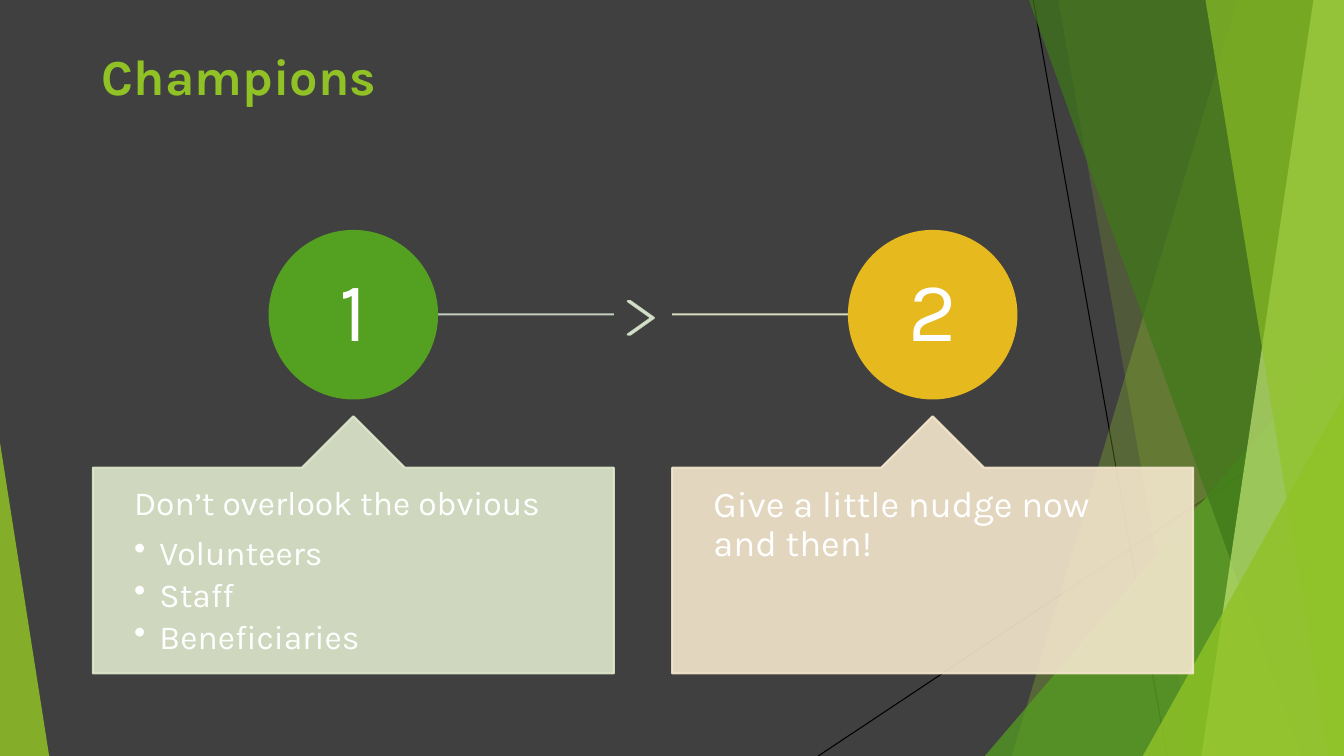
from dataclasses import dataclass

from lxml.etree import SubElement
from pptx import Presentation
from pptx.dml.color import RGBColor
from pptx.enum.shapes import MSO_CONNECTOR, MSO_SHAPE
from pptx.enum.text import MSO_ANCHOR, MSO_AUTO_SIZE, PP_ALIGN
from pptx.oxml.ns import qn
from pptx.shapes.autoshape import Shape
from pptx.shapes.connector import Connector
from pptx.slide import Slide
from pptx.text.text import TextFrame
from pptx.util import Cm, Pt

FONT = "Karla"
WIDTH, HEIGHT = 33.87, 19.05
CHARCOAL = RGBColor(0x40, 0x40, 0x40)
BLACK = RGBColor(0x00, 0x00, 0x00)
WHITE = RGBColor(0xFF, 0xFF, 0xFF)
LIME = RGBColor(0x90, 0xC2, 0x26)
PALE_LIME = RGBColor(0xC0, 0xE4, 0x74)
FOREST = RGBColor(0x3F, 0x78, 0x19)
GREEN = RGBColor(0x54, 0xA0, 0x21)
GOLD = RGBColor(0xE6, 0xB9, 0x1E)
SAGE = RGBColor(0xDF, 0xE9, 0xCC)
SAND = RGBColor(0xF5, 0xE7, 0xCD)
FIRST_LINE = RGBColor(0xD1, 0xDF, 0xCD)
SECOND_LINE = RGBColor(0xEA, 0xEE, 0xCC)
CHEVRON = RGBColor(0xD7, 0xE4, 0xCC)

CARD_WIDTH, CARD_TOP, CARD_HEIGHT = 13.13, 10.49, 6.48
POINTER = 1.3
CIRCLE_TOP, CIRCLE_SIZE, NUMBER_SIZE = 5.82, 4.22, 3.0
LINE_Y = 7.92
LINE_HEIGHT = 1.17


@dataclass
class Band:
    """Panel reaching the right edge, with a slanted left side."""
    top_left: float
    bottom_left: float
    colour: RGBColor
    opacity: int


@dataclass
class Wedge:
    """Right triangle standing on the bottom edge."""
    left: float
    top: float
    width: float
    apex: float
    colour: RGBColor
    opacity: int


@dataclass
class Line:
    start: tuple[float, float]
    end: tuple[float, float]
    colour: RGBColor
    weight: float
    opacity: int = 100


@dataclass
class Step:
    number: str
    left: float
    circle: RGBColor
    card: RGBColor
    size: int
    heading: str
    bullets: tuple[str, ...]
    line: Line


EDGE_LINES = [
    Line((26.04, 0), (29.41, HEIGHT), BLACK, 0.75),
    Line((WIDTH, 10.24), (20.62, HEIGHT), BLACK, 0.75),
]
FACETS = [
    Band(31.19, 25.5, LIME, 30),
    Band(26.67, 30.05, LIME, 20),
    Wedge(24.82, 8.46, WIDTH - 24.82, 1, GREEN, 72),
    Band(25.93, 32.79, FOREST, 70),
    Band(33.1, 30.28, PALE_LIME, 70),
    Band(30.38, 33.48, LIME, 65),
    Wedge(28.8, 9.98, WIDTH - 28.8, 1, LIME, 80),
    Wedge(0, 11.15, 1.24, 0, LIME, 85),
]
STEPS = [
    Step("1", 2.34, GREEN, SAGE, 24, "Don’t overlook the obvious",
         ("Volunteers", "Staff", "Beneficiaries"),
         Line((9.63, LINE_Y), (15.47, LINE_Y), FIRST_LINE, 1.5, 90)),
    Step("2", 16.94, GOLD, SAND, 26, "Give a little nudge now and then!", (),
         Line((16.94, LINE_Y), (23.52, LINE_Y), SECOND_LINE, 1.5, 90)),
]


def set_opacity(shape: Shape | Connector, percent: int) -> None:
    if percent < 100:
        for colour in shape._element.xpath("./p:spPr//a:srgbClr"):
            SubElement(colour, qn("a:alpha")).set("val", str(percent * 1000))


def paint(shape: Shape, colour: RGBColor, opacity: int = 100, outlined: bool = True) -> None:
    shape.shadow.inherit = False
    shape.fill.solid()
    shape.fill.fore_color.rgb = colour
    if outlined:
        shape.line.color.rgb = colour
        shape.line.width = Pt(1.5)
    else:
        shape.line.fill.background()
    set_opacity(shape, opacity)


def draw_line(page: Slide, line: Line) -> None:
    connector = page.shapes.add_connector(
        MSO_CONNECTOR.STRAIGHT, *map(Cm, line.start + line.end))
    connector.line.color.rgb = line.colour
    connector.line.width = Pt(line.weight)
    SubElement(connector._element.spPr, qn("a:effectLst"))
    set_opacity(connector, line.opacity)


def draw_facet(page: Slide, facet: Band | Wedge) -> None:
    if isinstance(facet, Band):
        builder = page.shapes.build_freeform(Cm(facet.top_left), 0)
        corners = [(WIDTH, 0), (WIDTH, HEIGHT), (facet.bottom_left, HEIGHT)]
        builder.add_line_segments([(Cm(x), Cm(y)) for x, y in corners])
        shape = builder.convert_to_shape()
    else:
        shape = page.shapes.add_shape(
            MSO_SHAPE.ISOSCELES_TRIANGLE, Cm(facet.left), Cm(facet.top),
            Cm(facet.width), Cm(HEIGHT - facet.top))
        shape.adjustments[0] = facet.apex
    paint(shape, facet.colour, facet.opacity, outlined=False)


def add_text_frame(page: Slide, left: float, top: float, width: float, height: float,
                   side: float, edge: float) -> TextFrame:
    box = page.shapes.add_textbox(Cm(left), Cm(top), Cm(width), Cm(height))
    frame = box.text_frame
    frame.word_wrap = True
    frame.margin_left = frame.margin_right = Cm(side)
    frame.margin_top = frame.margin_bottom = Cm(edge)
    return frame


def write(frame: TextFrame, text: str, size: int, after: float = 0.35,
          colour: RGBColor = WHITE, bold: bool = False, bullet: bool = False,
          alignment: PP_ALIGN = PP_ALIGN.LEFT) -> None:
    """Fill the first paragraph if it is empty, else add one; after is a share of a line."""
    para = frame.paragraphs[0] if not frame.text else frame.add_paragraph()
    para.alignment = alignment
    para.line_spacing = 0.9
    para.space_after = Pt(round(after * size * LINE_HEIGHT, 1))
    if bullet:
        properties = para._p.get_or_add_pPr()
        properties.set("marL", str(Cm(0.64)))
        properties.set("indent", str(-Cm(0.64)))
        SubElement(properties, qn("a:buChar")).set("char", "•")
    span = para.add_run()
    span.text = text
    span.font.name = FONT
    span.font.size = Pt(size)
    span.font.bold = bold
    span.font.color.rgb = colour


def draw_step(page: Slide, step: Step) -> None:
    draw_line(page, step.line)
    centre = step.left + CARD_WIDTH / 2
    circle = page.shapes.add_shape(
        MSO_SHAPE.OVAL, Cm(centre - CIRCLE_SIZE / 2), Cm(CIRCLE_TOP),
        Cm(CIRCLE_SIZE), Cm(CIRCLE_SIZE))
    paint(circle, step.circle)
    inset = (CIRCLE_SIZE - NUMBER_SIZE) / 2
    number = add_text_frame(page, centre - NUMBER_SIZE / 2, CIRCLE_TOP + inset,
                            NUMBER_SIZE, NUMBER_SIZE, 0.18, 0.18)
    number.vertical_anchor = MSO_ANCHOR.MIDDLE
    write(number, step.number, 60, alignment=PP_ALIGN.CENTER)

    card = page.shapes.add_shape(
        MSO_SHAPE.UP_ARROW_CALLOUT, Cm(step.left), Cm(CARD_TOP),
        Cm(CARD_WIDTH), Cm(CARD_HEIGHT))
    for index, value in enumerate((0.5, 0.2, 0.2, 1)):
        card.adjustments[index] = value
    paint(card, step.card, 90)
    body = add_text_frame(page, step.left, CARD_TOP + POINTER, CARD_WIDTH,
                          CARD_HEIGHT - POINTER, 1.04, 0.46)
    write(body, step.heading, step.size)
    for item in step.bullets:
        write(body, item, step.size, after=0.15, bullet=True)


def main() -> None:
    deck = Presentation()
    deck.slide_width, deck.slide_height = Cm(WIDTH), Cm(HEIGHT)
    page = deck.slides.add_slide(deck.slide_layouts[5])
    page.background.fill.solid()
    page.background.fill.fore_color.rgb = CHARCOAL
    for line in EDGE_LINES:
        draw_line(page, line)
    for facet in FACETS:
        draw_facet(page, facet)

    title = page.shapes.title
    title.left, title.top, title.width, title.height = map(Cm, (2.31, 1.02, 29.24, 3.68))
    title.text_frame.auto_size = MSO_AUTO_SIZE.NONE
    title.text_frame.vertical_anchor = MSO_ANCHOR.TOP
    write(title.text_frame, "Champions", 36, after=0, colour=LIME, bold=True)
    title.text_frame.paragraphs[0].line_spacing = 1.0

    for step in STEPS:
        draw_step(page, step)
    chevron = page.shapes.add_shape(
        MSO_SHAPE.CHEVRON, Cm(15.82), Cm(7.59), Cm(0.66), Cm(0.84))
    chevron.adjustments[0] = 0.9
    paint(chevron, CHEVRON, 90)
    deck.save("out.pptx")


if __name__ == "__main__":
    main()
